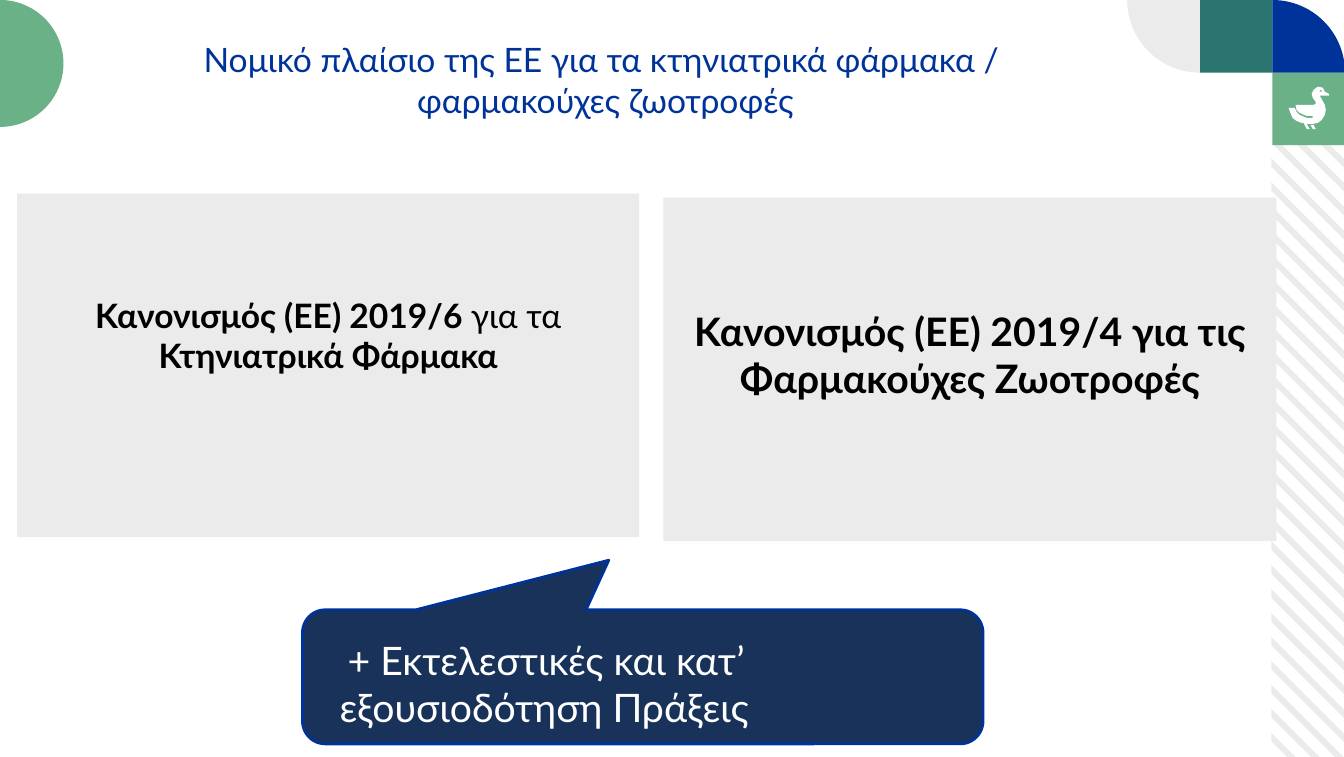
from math import cos, radians, sin

from pptx import Presentation
from pptx.dml.color import RGBColor
from pptx.enum.shapes import MSO_SHAPE
from pptx.enum.text import MSO_ANCHOR, MSO_AUTO_SIZE, PP_ALIGN
from pptx.util import Emu, Pt

RECT = MSO_SHAPE.RECTANGLE
CALLOUT = MSO_SHAPE.ROUNDED_RECTANGULAR_CALLOUT
TOP, MIDDLE = MSO_ANCHOR.TOP, MSO_ANCHOR.MIDDLE
CENTER, LEFT = PP_ALIGN.CENTER, PP_ALIGN.LEFT
FIXED = MSO_AUTO_SIZE.NONE

SCALE = 9144
WIDE, HIGH = 1333, 751
TILE = 72
FONT = "Lato"
GRAY, TEAL, GREEN = "ECEBEB", "2C7470", "6BB188"
BLUE, NAVY, WHITE, BLACK = "003399", "18325A", "FFFFFF", "000000"

FOOT = [(27, 42), (25, 38), (22, 38), (24, 42)]
DUCK = [
    (40, 7), (36, 5), (34, 1), (29, 0), (25, 3), (23, 7), (24, 11),
    (27, 15), (27, 17), (25, 18), (7, 18), (8, 23), (11, 26), (18, 29),
    (24, 29), (24, 31), (18, 31), (11, 28), (8, 25), (6, 21), (0, 21),
    (2, 26), (4, 31), (8, 34), (13, 36), (15, 36), (18, 42), (21, 42),
    (18, 37), (24, 37), (29, 36), (33, 33), (36, 28), (37, 23), (36, 18),
    (31, 9), (40, 9),
]
EYE = [(33, 4), (33, 5), (31, 5), (31, 4), (32, 3)]


def px(num):
    return Emu(round(num * SCALE))


def paint(form, color):
    form.fill.solid()
    form.fill.fore_color.rgb = RGBColor.from_string(color)


def outline(slide, paths, color):
    pen = None
    for path in paths:
        pts = [(px(x), px(y)) for x, y in path]
        if pen is None:
            pen = slide.shapes.build_freeform(*pts[0])
        else:
            pen.move_to(*pts[0])
        pen.add_line_segments(pts[1:], close=True)
    shape = pen.convert_to_shape()
    shape.shadow.inherit = False
    paint(shape, color)
    shape.line.fill.background()


def sector(slide, x, y, size, start, end, color):
    arc = [
        (x + size * cos(radians(a)), y + size * sin(radians(a)))
        for a in range(start, end + 1, 3)
    ]
    outline(slide, [[(x, y)] + arc], color)


def block(slide, kind, box, color):
    shape = slide.shapes.add_shape(kind, *map(px, box))
    shape.shadow.inherit = False
    paint(shape, color)
    shape.line.fill.background()
    return shape


def style(frame, size, color, align, anchor, bold=False):
    frame.word_wrap = True
    frame.auto_size = FIXED
    frame.vertical_anchor = anchor
    for para in frame.paragraphs:
        para.alignment = align
        for run in para.runs:
            font = run.font
            font.name, font.size, font.bold = FONT, Pt(size), bold
            font.color.rgb = RGBColor.from_string(color)


def stripes(slide, box):
    left, top, wide, high = box
    step, thick = 23.75, 8.5
    paths = []
    for num in range(-3, 25):
        path = []
        for drop in (0, thick):
            base = 13 + num * step + drop
            ends = [max(0, -base), min(wide, high - base)]
            if drop:
                ends.reverse()
            path += [(left + d, top + base + d) for d in ends]
        paths.append(path)
    outline(slide, paths, GRAY)


def corner(slide, box):
    left, top, size = box
    mid, right = left + size, left + 2 * size
    block(slide, RECT, (mid, top, size, size), TEAL)
    block(slide, RECT, (right, top + size, size, size), GREEN)
    sector(slide, right, top + size, size, 270, 360, BLUE)
    sector(slide, mid, top, size, 90, 180, GRAY)
    paths = [
        [(right + 16 + x, top + size + 14 + y) for x, y in path]
        for path in (DUCK, EYE, FOOT)
    ]
    outline(slide, paths, WHITE)


def heading(slide, box, text):
    title = slide.shapes.title
    title.left, title.top, title.width, title.height = map(px, box)
    title.text_frame.text = text
    style(title.text_frame, 24, BLUE, CENTER, TOP)


def card(slide, box, parts, size, lift):
    frame = block(slide, RECT, box, GRAY).text_frame
    frame.margin_bottom = px(5 + lift)
    para = frame.paragraphs[0]
    for text, _ in parts:
        para.add_run().text = text
    style(frame, size, BLACK, CENTER, MIDDLE)
    for run, (_, bold) in zip(para.runs, parts):
        run.font.bold = bold


def note(slide, box, text):
    left, top, wide, high = box
    shape = block(slide, CALLOUT, box, NAVY)
    for num, value in enumerate((-0.05, -0.87, 0.17)):
        shape.adjustments[num] = value
    shape.line.color.rgb = RGBColor.from_string(BLUE)
    shape.line.width = Pt(2)
    label = slide.shapes.add_textbox(
        px(left + 27), px(top + 21), px(wide - 63), px(high - 31)
    )
    frame = label.text_frame
    frame.text = text
    style(frame, 28, WHITE, LEFT, TOP)
    frame.paragraphs[0]._p.get_or_add_pPr().set("indent", str(px(8)))


def main():
    deck = Presentation()
    deck.slide_width, deck.slide_height = px(WIDE), px(HIGH)
    slide = deck.slides.add_slide(deck.slide_layouts[5])
    edge = WIDE - TILE
    stripes(slide, (edge, 2 * TILE, TILE, HIGH - 2 * TILE))
    corner(slide, (WIDE - 3 * TILE + 1, 0, TILE))
    sector(slide, 0, 63, 63, -90, 90, GREEN)
    heading(
        slide,
        (83, 34, 1035, 52),
        "Νομικό πλαίσιο της ΕΕ για τα κτηνιατρικά φάρμακα / \vφαρμακούχες ζωοτροφές",
    )
    card(
        slide,
        (17, 192, 617, 341),
        [
            ("Κανονισμός (ΕΕ) 2019/6 ", True),
            ("για τα", False),
            (" Κτηνιατρικά Φάρμακα", True),
        ],
        24,
        60,
    )
    card(
        slide,
        (658, 196, 608, 341),
        [("Κανονισμός (ΕΕ) 2019/4 για τις Φαρμακούχες Ζωοτροφές", True)],
        28,
        30,
    )
    note(
        slide,
        (300, 605, 675, 133),
        "+ Εκτελεστικές και κατ’ εξουσιοδότηση Πράξεις",
    )
    deck.save("out.pptx")


if __name__ == "__main__":
    main()
